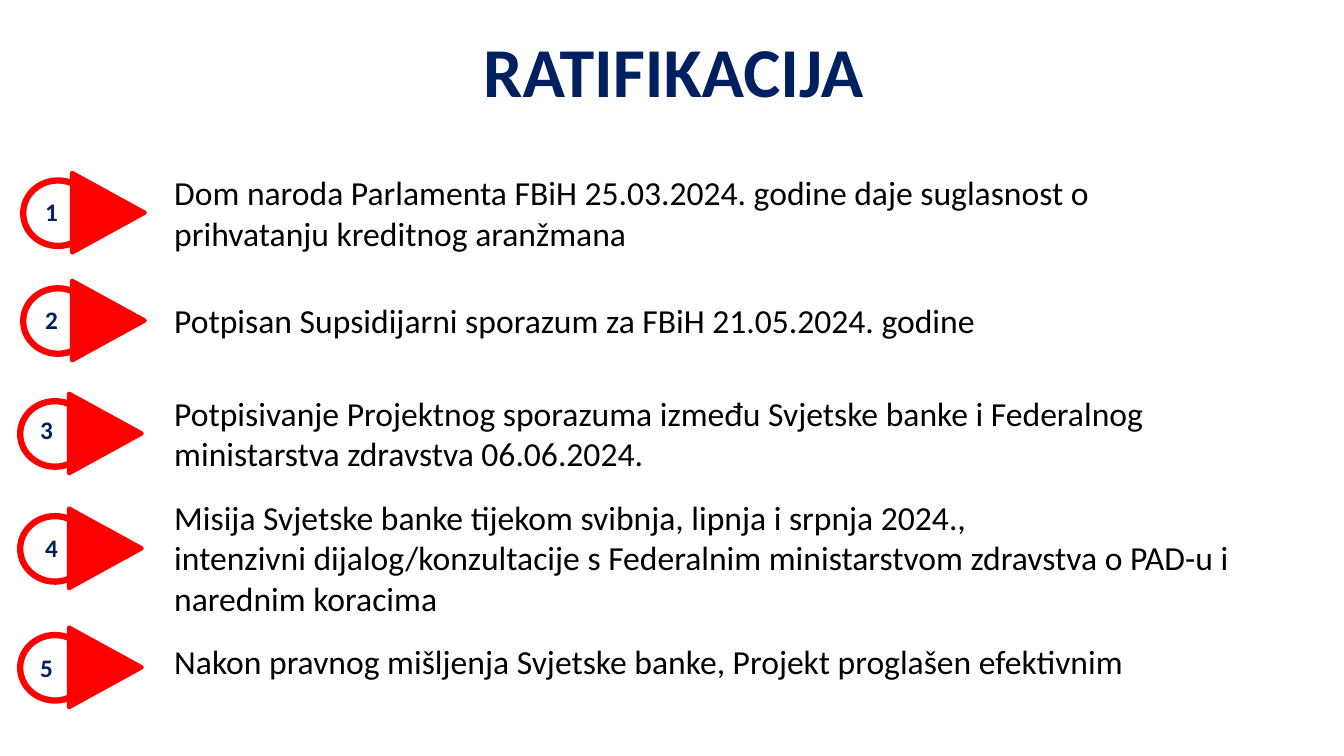
from dataclasses import dataclass

from pptx import Presentation
from pptx.dml.color import RGBColor
from pptx.enum.shapes import MSO_SHAPE
from pptx.enum.text import MSO_ANCHOR, MSO_AUTO_SIZE, PP_ALIGN
from pptx.shapes.autoshape import Shape
from pptx.slide import Slide
from pptx.util import Inches, Pt

RED = "FF0000"
NAVY = "002060"
BLACK = "000000"


@dataclass(frozen=True)
class Step:
    marker_x: float
    marker_y: float
    number_x: float
    number_y: float
    text_y: float
    text_height: float
    lines: tuple[str, ...]


STEPS = [
    Step(0.23, 1.79, 0.35, 1.9, 1.66, 0.91, (
        "Dom naroda Parlamenta FBiH 25.03.2024. godine daje suglasnost o prihvatanju kreditnog aranžmana",
    )),
    Step(0.23, 2.86, 0.35, 2.97, 2.93, 0.5, (
        "Potpisan Supsidijarni sporazum za FBiH 21.05.2024. godine",
    )),
    Step(0.2, 3.98, 0.3, 4.06, 3.85, 0.91, (
        "Potpisivanje Projektnog sporazuma između Svjetske banke i Federalnog ministarstva zdravstva 06.06.2024.",
    )),
    Step(0.2, 5.12, 0.35, 5.23, 4.88, 1.31, (
        "Misija Svjetske banke tijekom svibnja, lipnja i srpnja 2024.,",
        "intenzivni dijalog/konzultacije s Federalnim ministarstvom zdravstva o PAD-u i narednim koracima",
    )),
    Step(0.2, 6.3, 0.3, 6.42, 6.31, 0.5, (
        "Nakon pravnog mišljenja Svjetske banke, Projekt proglašen efektivnim",
    )),
]


def color(value: str) -> RGBColor:
    return RGBColor.from_string(value)


def add_text(s: Slide, lines: tuple[str, ...], x: float, y: float, w: float, h: float,
             size: float, hue: str, bold: bool = False, wrap: bool = True) -> Shape:
    sp = s.shapes.add_textbox(Inches(x), Inches(y), Inches(w), Inches(h))
    tf = sp.text_frame
    tf.word_wrap = wrap
    tf.auto_size = MSO_AUTO_SIZE.SHAPE_TO_FIT_TEXT
    for i, line in enumerate(lines):
        p = tf.add_paragraph() if i else tf.paragraphs[0]
        p.text = line
        p.font.name = "Calibri"
        p.font.size = Pt(size)
        p.font.bold = bold
        p.font.color.rgb = color(hue)
    return sp


def add_title(s: Slide, title: str) -> None:
    sp = add_text(s, (title,), 0.35, 0.37, 12.66, 0.79, 50, NAVY, bold=True)
    tf = sp.text_frame
    tf.auto_size = MSO_AUTO_SIZE.NONE
    tf.vertical_anchor = MSO_ANCHOR.MIDDLE
    p = tf.paragraphs[0]
    p.alignment = PP_ALIGN.CENTER
    p.line_spacing = 0.8


def add_marker(s: Slide, x: float, y: float) -> None:
    group = s.shapes.add_group_shape()
    arrow = group.shapes.add_shape(
        MSO_SHAPE.ISOSCELES_TRIANGLE, Inches(x + 0.45), Inches(y - 0.04), Inches(0.79), Inches(0.72))
    arrow.rotation = 90
    arrow.fill.solid()
    arrow.fill.fore_color.rgb = color(RED)
    ring = group.shapes.add_shape(MSO_SHAPE.OVAL, Inches(x), Inches(y), Inches(0.69), Inches(0.65))
    ring.fill.background()
    for sp, width in ((arrow, 3), (ring, 4.5)):
        sp.shadow.inherit = False
        sp.line.color.rgb = color(RED)
        sp.line.width = Pt(width)


def add_step(s: Slide, number: int, step: Step) -> None:
    add_marker(s, step.marker_x, step.marker_y)
    add_text(s, step.lines, 1.63, step.text_y, 10.83, step.text_height, 24, BLACK)
    add_text(s, (str(number),), step.number_x, step.number_y, 0.33, 0.4, 18, NAVY, bold=True, wrap=False)


def main() -> None:
    prs = Presentation()
    prs.slide_width = Inches(13.33)
    prs.slide_height = Inches(7.5)
    s = prs.slides.add_slide(prs.slide_layouts[6])
    add_title(s, "RATIFIKACIJA")
    for number, step in enumerate(STEPS, 1):
        add_step(s, number, step)
    prs.save("out.pptx")


if __name__ == "__main__":
    main()
